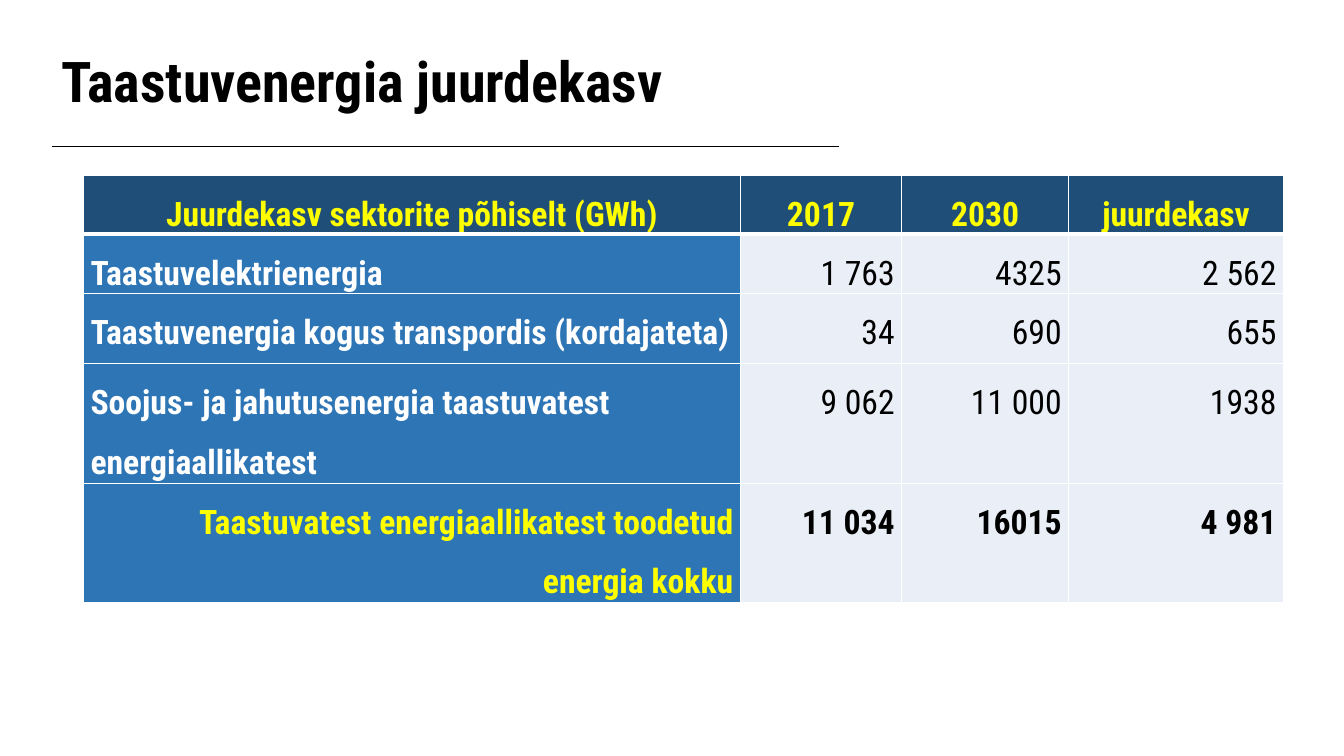
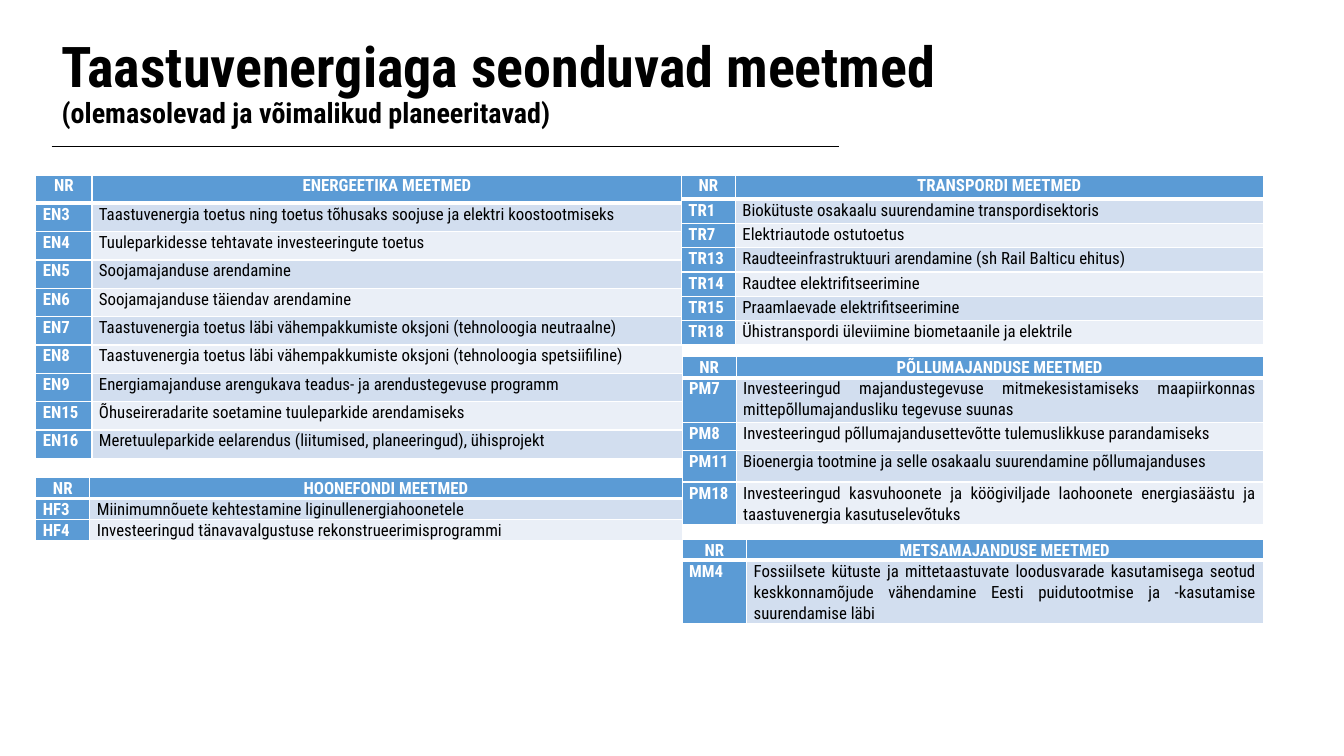
from lxml.etree import SubElement
from pptx import Presentation
from pptx.dml.color import RGBColor
from pptx.enum.shapes import MSO_CONNECTOR
from pptx.enum.text import MSO_ANCHOR, MSO_AUTO_SIZE, PP_ALIGN
from pptx.oxml.ns import qn
from pptx.util import Pt

# Shared style
FONT = "Roboto Condensed"
BLACK = RGBColor(0x00, 0x00, 0x00)
WHITE = RGBColor(0xFF, 0xFF, 0xFF)
YELLOW = RGBColor(0xFF, 0xFF, 0x00)
NAVY = RGBColor(0x1F, 0x4E, 0x79)
BLUE = RGBColor(0x2E, 0x75, 0xB6)
SKY = RGBColor(0x5B, 0x9B, 0xD5)
BAND_DARK = RGBColor(0xD2, 0xDE, 0xEF)
BAND_LIGHT = RGBColor(0xEA, 0xEF, 0xF7)
MARGIN = 36.72
TABLE_TOP = 124.6

prs = Presentation()
prs.slide_width, prs.slide_height = Pt(957.6), Pt(538.56)


def add_titled_slide(heading, width, subheading=None):
    """Add a slide with its title and the rule below it."""
    slide = prs.slides.add_slide(prs.slide_layouts[5])
    title = slide.shapes.title
    title.left, title.top, title.width, title.height = Pt(MARGIN), Pt(36), Pt(width), Pt(48)
    frame = title.text_frame
    frame.word_wrap = True
    frame.auto_size = MSO_AUTO_SIZE.NONE
    frame.vertical_anchor = MSO_ANCHOR.MIDDLE
    paragraph = frame.paragraphs[0]
    paragraph.alignment = PP_ALIGN.LEFT
    paragraph.line_spacing = 0.9
    for text, size in ((heading, 40), (subheading, 20)):
        if text is None:
            continue
        if paragraph.runs:
            paragraph.add_line_break()
        run = paragraph.add_run()
        run.text = text
        run.font.name, run.font.size, run.font.bold = FONT, Pt(size), True
        run.font.color.rgb = BLACK
    rule = slide.shapes.add_connector(
        MSO_CONNECTOR.STRAIGHT, Pt(MARGIN), Pt(104.4), Pt(597.6), Pt(104.4))
    rule.line.color.rgb = BLACK
    rule.line.width = Pt(0.75)
    SubElement(rule._element.spPr, qn("a:effectLst"))
    return slide


def fill_cell(table, row, col, text, fill, color, size, bold, align, spacing):
    """Write one cell with white borders, thicker below the header row."""
    cell = table.cell(row, col)
    cell.margin_left = cell.margin_right = Pt(5)
    cell.margin_top = cell.margin_bottom = 0
    borders = {"L": 1, "R": 1, "T": 3 if row == 1 else 1, "B": 3 if row == 0 else 1}
    for side, width in borders.items():
        line = SubElement(cell._tc.get_or_add_tcPr(), qn(f"a:ln{side}"), w=str(Pt(width)))
        SubElement(SubElement(line, qn("a:solidFill")), qn("a:srgbClr"), val=str(WHITE))
    cell.fill.solid()
    cell.fill.fore_color.rgb = fill
    paragraph = cell.text_frame.paragraphs[0]
    paragraph.text = text
    paragraph.alignment = align
    paragraph.line_spacing = spacing
    font = paragraph.font
    font.name, font.size, font.bold = FONT, Pt(size), bold
    font.color.rgb = color


# Slide 1: growth by sector
growth_slide = add_titled_slide("Taastuvenergia juurdekasv", 692)
growth_rows = [
    ("Juurdekasv sektorite põhiselt (GWh)", "2017", "2030", "juurdekasv"),
    ("Taastuvelektrienergia", "1 763", "4325", "2 562"),
    ("Taastuvenergia kogus transpordis (kordajateta)", "34", "690", "655"),
    ("Soojus- ja jahutusenergia taastuvatest energiaallikatest", "9 062", "11 000", "1938"),
    ("Taastuvatest energiaallikatest toodetud energia kokku", "11 034", "16015", "4 981"),
]
growth_widths = [468, 115, 119, 153]
growth_heights = [42, 42, 50, 85, 85]
growth = growth_slide.shapes.add_table(
    len(growth_rows), len(growth_widths), Pt(59.5), Pt(TABLE_TOP),
    Pt(sum(growth_widths)), Pt(sum(growth_heights))).table
for col, width in enumerate(growth_widths):
    growth.columns[col].width = Pt(width)
total_row = len(growth_rows) - 1
for row, values in enumerate(growth_rows):
    growth.rows[row].height = Pt(growth_heights[row])
    for col, text in enumerate(values):
        bold = col == 0 or row in (0, total_row)
        if row == 0:
            fill, color, align = NAVY, YELLOW, PP_ALIGN.CENTER
        elif col > 0:
            fill, color, align = BAND_LIGHT, BLACK, PP_ALIGN.RIGHT
        elif row == total_row:
            fill, color, align = BLUE, YELLOW, PP_ALIGN.RIGHT
        else:
            fill, color, align = BLUE, WHITE, PP_ALIGN.LEFT
        fill_cell(growth, row, col, text, fill, color, 24, bold, align, 1.5)

# Slide 2: measures by sector
measures_slide = add_titled_slide(
    "Taastuvenergiaga seonduvad meetmed", 748, "(olemasolevad ja võimalikud planeeritavad)")

# Sector, left, top, column widths, row heights, measures
sectors = [
    ("ENERGEETIKA MEETMED", 25.5, TABLE_TOP, (40, 420.5), [20.2] * 10, [
        ("EN3", "Taastuvenergia toetus ning toetus tõhusaks soojuse ja elektri koostootmiseks"),
        ("EN4", "Tuuleparkidesse tehtavate investeeringute toetus"),
        ("EN5", "Soojamajanduse arendamine"),
        ("EN6", "Soojamajanduse täiendav arendamine"),
        ("EN7", "Taastuvenergia toetus läbi vähempakkumiste oksjoni (tehnoloogia neutraalne)"),
        ("EN8", "Taastuvenergia toetus läbi vähempakkumiste oksjoni (tehnoloogia spetsiifiline)"),
        ("EN9", "Energiamajanduse arengukava teadus- ja arendustegevuse programm"),
        ("EN15", "Õhuseireradarite soetamine tuuleparkide arendamiseks"),
        ("EN16", "Meretuuleparkide eelarendus (liitumised, planeeringud), ühisprojekt"),
    ]),
    ("TRANSPORDI MEETMED", 485.5, TABLE_TOP, (38.5, 376), [17.3] * 7, [
        ("TR1", "Biokütuste osakaalu suurendamine transpordisektoris"),
        ("TR7", "Elektriautode ostutoetus"),
        ("TR13", "Raudteeinfrastruktuuri arendamine (sh Rail Balticu ehitus)"),
        ("TR14", "Raudtee elektrifitseerimine"),
        ("TR15", "Praamlaevade elektrifitseerimine"),
        ("TR18", "Ühistranspordi üleviimine biometaanile ja elektrile"),
    ]),
    ("HOONEFONDI MEETMED", 25.5, 340, (38.5, 422), [15] * 3, [
        ("HF3", "Miinimumnõuete kehtestamine liginullenergiahoonetele"),
        ("HF4", "Investeeringud tänavavalgustuse rekonstrueerimisprogrammi"),
    ]),
    ("PÕLLUMAJANDUSE MEETMED", 486, 254, (38.5, 375.5), [15, 31.7, 20.2, 22.5, 30], [
        ("PM7", "Investeeringud majandustegevuse mitmekesistamiseks maapiirkonnas "
                "mittepõllumajandusliku tegevuse suunas"),
        ("PM8", "Investeeringud põllumajandusettevõtte tulemuslikkuse parandamiseks"),
        ("PM11", "Bioenergia tootmine ja selle osakaalu suurendamine põllumajanduses"),
        ("PM18", "Investeeringud kasvuhoonete ja köögiviljade laohoonete energiasäästu ja "
                 "taastuvenergia kasutuselevõtuks"),
    ]),
    ("METSAMAJANDUSE MEETMED", 486, 384, (46, 368), [15, 45], [
        ("MM4", "Fossiilsete kütuste ja mittetaastuvate loodusvarade kasutamisega seotud "
                "keskkonnamõjude vähendamine Eesti puidutootmise ja -kasutamise "
                "suurendamise läbi"),
    ]),
]
for sector, left, top, widths, heights, measures in sectors:
    measure_table = measures_slide.shapes.add_table(
        len(heights), 2, Pt(left), Pt(top), Pt(sum(widths)), Pt(sum(heights))).table
    for col, width in enumerate(widths):
        measure_table.columns[col].width = Pt(width)
    for row, values in enumerate([("NR", sector)] + measures):
        measure_table.rows[row].height = Pt(heights[row])
        align = PP_ALIGN.CENTER if row == 0 else PP_ALIGN.JUSTIFY
        band = BAND_DARK if row % 2 else BAND_LIGHT
        for col, text in enumerate(values):
            label = row == 0 or col == 0
            fill, color = (SKY, WHITE) if label else (band, BLACK)
            fill_cell(measure_table, row, col, text, fill, color, 12, label, align, 1.07)

prs.save("out.pptx")
